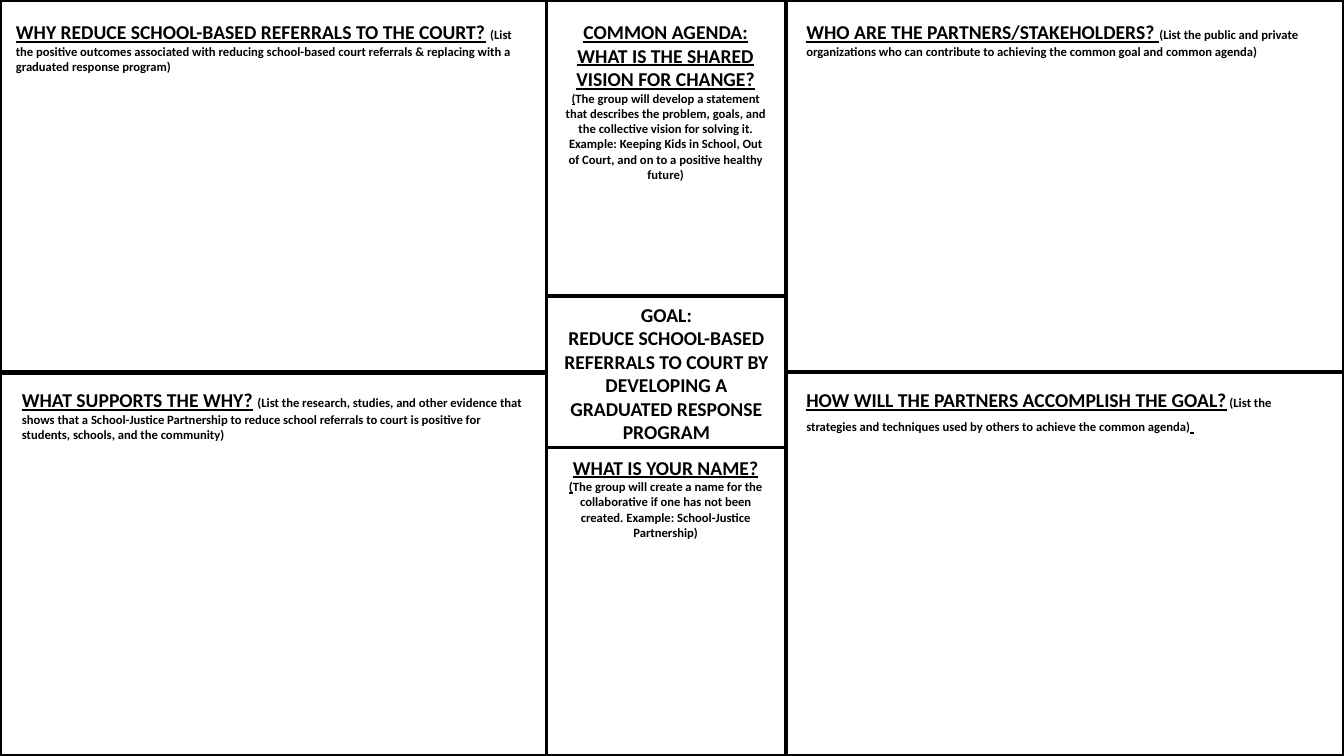
from pptx import Presentation
from pptx.dml.color import RGBColor as RGB
from pptx.enum.shapes import MSO_SHAPE as Shape
from pptx.enum.text import MSO_ANCHOR as Anchor, MSO_AUTO_SIZE as Fit, PP_ALIGN as Align
from pptx.util import Cm, Pt

INK = "000000"
FRAME = {"word_wrap": True, "auto_size": Fit.SHAPE_TO_FIT_TEXT, "vertical_anchor": Anchor.TOP,
         "margin_left": Cm(0.25), "margin_right": Cm(0.25),
         "margin_top": Cm(0.13), "margin_bottom": Cm(0.13)}
FONT = {"name": "Calibri", "bold": True}
HEAD = {"size": Pt(14), "underline": True}
GOAL = {"size": Pt(14), "underline": False}
NOTE = {"size": Pt(9), "underline": False}
MARK = {"size": Pt(9), "underline": True}

WIDE, HIGH = 33.87, 19.05
LEFT, RIGHT = 13.77, 19.81
MID = 9.37
TOP, BASE = 7.46, 11.28

CELLS = [
    (0, 0, LEFT, 9.42),
    (0, MID, LEFT, HIGH),
    (RIGHT, 0, WIDE, MID),
    (RIGHT, MID, WIDE, HIGH),
    (LEFT, 0, RIGHT, TOP),
    (LEFT, TOP, RIGHT, BASE),
    (LEFT, BASE, RIGHT, HIGH),
]

AIM = [
    [("GOAL:", GOAL)],
    [("REDUCE SCHOOL-BASED REFERRALS TO COURT BY DEVELOPING A GRADUATED RESPONSE PROGRAM", GOAL)],
]

TEXTS = [
    ((0.15, 0.38, 13.49, 2.24), Align.LEFT, [
        [("WHY REDUCE SCHOOL-BASED REFERRALS TO THE COURT?", HEAD), (" ", GOAL),
         ("(List the positive outcomes associated with reducing school-based court referrals "
          "& replacing with a graduated response program)", NOTE)]]),
    ((0.3, 9.65, 13.34, 1.63), Align.LEFT, [
        [("WHAT SUPPORTS THE WHY?", HEAD), (" ", GOAL),
         ("(List the research, studies, and other evidence that shows that a School-Justice "
          "Partnership to reduce school referrals to court is positive for students, schools, "
          "and the community)", NOTE)]]),
    ((13.97, 0.38, 5.61, 4.37), Align.CENTER, [
        [("COMMON AGENDA: WHAT IS THE SHARED VISION FOR CHANGE?", HEAD)],
        [("(", MARK), ("The group will develop a statement that describes the problem, goals, "
                       "and the collective vision for solving it.", NOTE)],
        [("Example: Keeping Kids in School, Out of Court, and on to a positive healthy future)",
          NOTE)]]),
    ((13.97, 11.35, 5.61, 2.39), Align.CENTER, [
        [("WHAT IS YOUR NAME?", HEAD)],
        [("(", MARK), ("The group will create a name for the collaborative if one has not been "
                       "created. Example: School-Justice Partnership)", NOTE)]]),
    ((20.07, 0.38, 13.54, 1.24), Align.LEFT, [
        [("WHO ARE THE PARTNERS/STAKEHOLDERS? ", HEAD),
         ("(List the public and private organizations who can contribute to achieving the "
          "common goal and common agenda)", NOTE)]]),
    ((20.07, 9.65, 13.54, 1.45), Align.LEFT, [
        [("HOW WILL THE PARTNERS ACCOMPLISH THE GOAL?", HEAD),
         (" (List the strategies and techniques used by others to achieve the common agenda)",
          NOTE), (" ", HEAD)]]),
]


def style(item, form):
    for key, value in form.items():
        setattr(item, key, value)


def paint(color, code):
    color.rgb = RGB.from_string(code)


def cell(slide, left, top, right, base):
    box = slide.shapes.add_shape(Shape.RECTANGLE, Cm(left), Cm(top),
                                 Cm(right - left), Cm(base - top))
    box.shadow.inherit = False
    box.fill.background()
    paint(box.line.color, INK)
    box.line.width = Pt(2.5)


def write(frame, align, paras):
    style(frame, FRAME)
    for i, runs in enumerate(paras):
        para = frame.add_paragraph() if i else frame.paragraphs[0]
        para.alignment = align
        for text, form in runs:
            run = para.add_run()
            run.text = text
            style(run.font, {**FONT, **form})
            paint(run.font.color, INK)


def title(slide, area, paras):
    head = slide.shapes.title
    style(head, dict(zip(("left", "top", "width", "height"), map(Cm, area))))
    write(head.text_frame, Align.CENTER, paras)


def label(slide, area, align, paras):
    box = slide.shapes.add_textbox(*map(Cm, area))
    write(box.text_frame, align, paras)


def main():
    deck = Presentation()
    style(deck, {"slide_width": Cm(WIDE), "slide_height": Cm(HIGH)})
    slide = deck.slides.add_slide(deck.slide_layouts[5])
    for sides in CELLS:
        cell(slide, *sides)
    title(slide, (LEFT, 7.49, 6.05, 3.84), AIM)
    for area, align, paras in TEXTS:
        label(slide, area, align, paras)
    deck.save("out.pptx")


if __name__ == "__main__":
    main()
